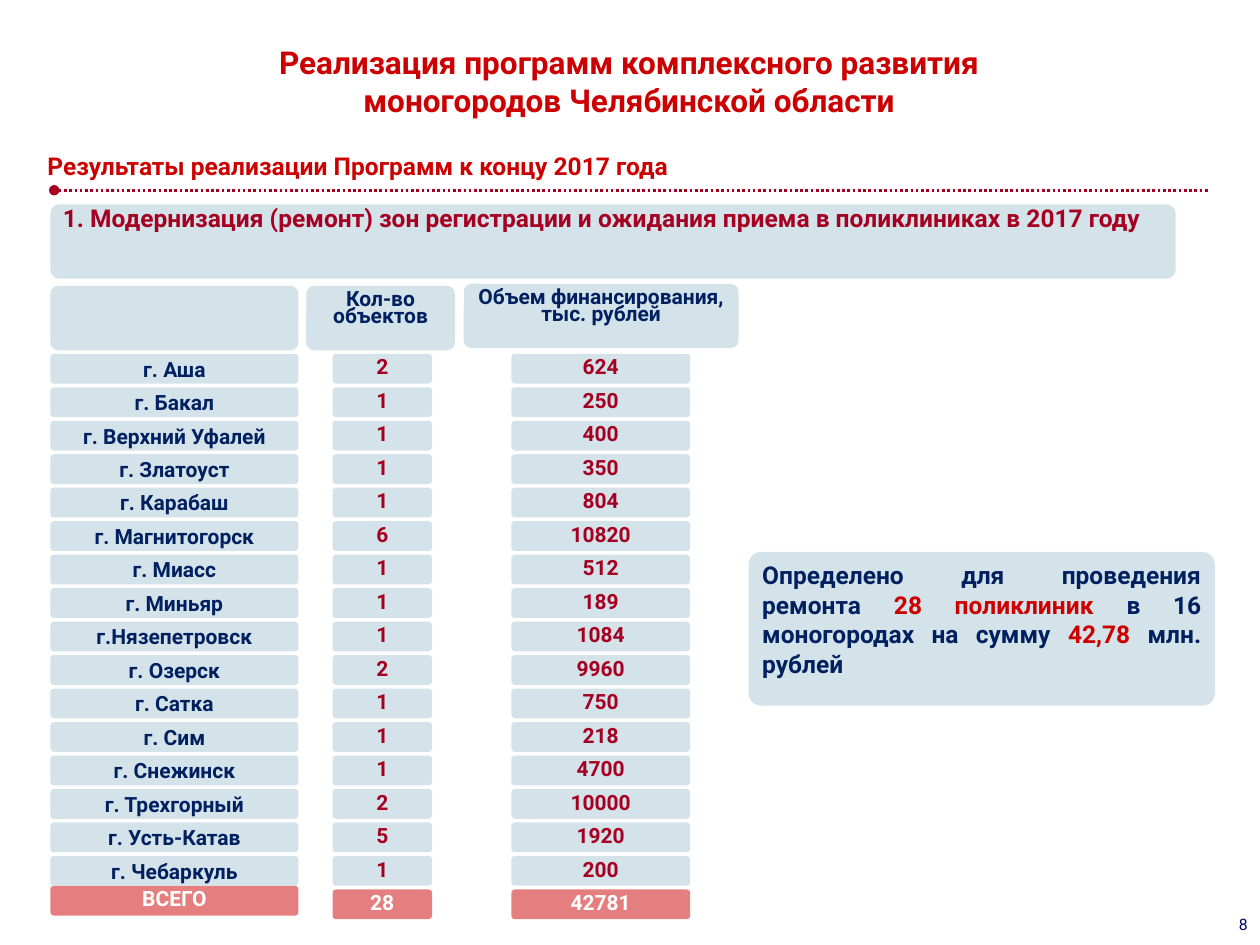
from dataclasses import dataclass
from pptx import Presentation
from pptx.dml.color import RGBColor
from pptx.enum.dml import MSO_LINE
from pptx.enum.shapes import MSO_CONNECTOR, MSO_SHAPE
from pptx.enum.text import MSO_ANCHOR, PP_ALIGN
from pptx.oxml.ns import qn
from pptx.util import Pt
from lxml.etree import SubElement

TITLE = "Реализация программ комплексного развития\vмоногородов Челябинской области"
SUBTITLE = "Результаты реализации Программ к концу 2017 года"
SECTION = "1. Модернизация (ремонт) зон регистрации и ожидания приема в поликлиниках в 2017 году"
PAGE_NUMBER = "8"
CITIES = [
    ("г. Аша", 2, 624),
    ("г. Бакал", 1, 250),
    ("г. Верхний Уфалей", 1, 400),
    ("г. Златоуст", 1, 350),
    ("г. Карабаш", 1, 804),
    ("г. Магнитогорск", 6, 10820),
    ("г. Миасс", 1, 512),
    ("г. Миньяр", 1, 189),
    ("г.Нязепетровск", 1, 1084),
    ("г. Озерск", 2, 9960),
    ("г. Сатка", 1, 750),
    ("г. Сим", 1, 218),
    ("г. Снежинск", 1, 4700),
    ("г. Трехгорный", 2, 10000),
    ("г. Усть-Катав", 5, 1920),
    ("г. Чебаркуль", 1, 200),
]
TOTAL = ("ВСЕГО", 28, 42781)
HEADERS = [
    ([], (28.8, 163.4, 141.8, 36.8)),
    (["Кол-во объектов"], (175, 163.4, 85, 36.8)),
    (["Объем финансирования,", "тыс. рублей"], (265, 162.2, 157, 36.8)),
]


@dataclass(frozen=True)
class Theme:
    font: str = "Roboto"
    white: str = "FFFFFF"
    panel: str = "ABC6D5"
    red: str = "CC0000"
    crimson: str = "A50021"
    navy: str = "002060"
    number: str = "000066"
    title_size: float = 18
    heading_size: float = 14
    body_size: float = 12
    number_size: float = 9


THEME = Theme()
SUMMARY = [
    ("Определено для проведения ремонта ", THEME.navy),
    ("28 поликлиник ", THEME.red),
    ("в 16 моногородах на сумму ", THEME.navy),
    ("42,78 ", THEME.red),
    ("млн. рублей", THEME.navy),
]
COLUMNS = [
    (28.8, 141.8, THEME.navy, None),
    (190, 56.9, THEME.crimson, 12),
    (292.2, 102.2, THEME.crimson, 12),
]
ROW_TOP, ROW_STEP, ROW_HEIGHT = 202.2, 19.13, 17
TOTAL_LABEL_TOP = 506.2


def add_text(shape, paragraphs, color=THEME.navy, size=THEME.body_size, bold=True,
             align=PP_ALIGN.CENTER, anchor=MSO_ANCHOR.TOP, spacing=None, insets=(7.2, 3.6)):
    frame = shape.text_frame
    frame.word_wrap = True
    frame.vertical_anchor = anchor
    frame.margin_left = frame.margin_right = Pt(insets[0])
    frame.margin_top = frame.margin_bottom = Pt(insets[1])
    for index, content in enumerate(paragraphs):
        para = frame.add_paragraph() if index else frame.paragraphs[0]
        para.alignment = align
        if spacing:
            para.line_spacing = Pt(spacing)
        spans = [(content, color)] if isinstance(content, str) else content
        for text, tint in spans:
            for line_index, line in enumerate(text.split("\v")):
                if line_index:
                    para.add_line_break()
                span = para.add_run()
                span.text = line
                span.font.name = THEME.font
                span.font.size = Pt(size)
                span.font.bold = bold
                span.font.color.rgb = RGBColor.from_string(tint)


def add_label(page, area, text, **style):
    box = page.shapes.add_textbox(*map(Pt, area))
    add_text(box, [text], **style)


def add_panel(page, area, paragraphs=(), fill=THEME.panel, radius=0.12, **style):
    panel = page.shapes.add_shape(MSO_SHAPE.ROUNDED_RECTANGLE, *map(Pt, area))
    panel.adjustments[0] = radius
    panel.shadow.inherit = False
    panel.line.fill.background()
    panel.fill.solid()
    panel.fill.fore_color.rgb = RGBColor.from_string(fill)
    tint = next(panel._element.spPr.iter(qn("a:srgbClr")))
    SubElement(tint, qn("a:alpha"), val="50000")
    add_text(panel, paragraphs, insets=(5.7, 2.8), **style)


def add_divider(page, left, right, top):
    divider = page.shapes.add_connector(
        MSO_CONNECTOR.STRAIGHT, Pt(left), Pt(top), Pt(right), Pt(top))
    divider.line.color.rgb = RGBColor.from_string(THEME.crimson)
    divider.line.width = Pt(1.5)
    divider.line.dash_style = MSO_LINE.ROUND_DOT
    SubElement(divider.line._get_or_add_ln(), qn("a:headEnd"), type="oval")
    SubElement(divider._element.spPr, qn("a:effectLst"))


def add_rows(page):
    for column, (left, width, color, spacing) in enumerate(COLUMNS):
        for row, city in enumerate(CITIES):
            area = (left, ROW_TOP + row * ROW_STEP, width, ROW_HEIGHT)
            add_panel(page, area, [str(city[column])], color=color,
                      anchor=MSO_ANCHOR.MIDDLE, spacing=spacing)
        top = ROW_TOP + len(CITIES) * ROW_STEP if column else TOTAL_LABEL_TOP
        add_panel(page, (left, top, width, ROW_HEIGHT), [str(TOTAL[column])], fill=THEME.red,
                  color=THEME.white, anchor=MSO_ANCHOR.MIDDLE, spacing=12)


def main():
    deck = Presentation()
    deck.slide_width, deck.slide_height = Pt(720), Pt(540)
    page = deck.slides.add_slide(deck.slide_layouts[6])
    add_label(page, (677.5, 519, 42.5, 18), PAGE_NUMBER, color=THEME.number,
              size=THEME.number_size, bold=False, align=PP_ALIGN.RIGHT)
    add_label(page, (110, 21, 499, 51), TITLE, color=THEME.red, size=THEME.title_size)
    add_panel(page, (0, 92, 705.6, 448), fill=THEME.white, radius=0.01)
    add_label(page, (20, 83, 487.5, 41), SUBTITLE, color=THEME.red,
              size=THEME.heading_size, align=PP_ALIGN.LEFT)
    add_divider(page, 31, 691.2, 108.7)
    add_panel(page, (28.8, 116.8, 643, 42.5), [SECTION], color=THEME.crimson,
              size=THEME.heading_size, align=PP_ALIGN.LEFT, spacing=12)
    for paragraphs, area in HEADERS:
        add_panel(page, area, paragraphs, spacing=10)
    add_rows(page)
    add_panel(page, (427.8, 315.4, 266.4, 87.8), [SUMMARY], radius=0.08,
              size=THEME.heading_size, align=PP_ALIGN.JUSTIFY)
    deck.save("out.pptx")


if __name__ == "__main__":
    main()
